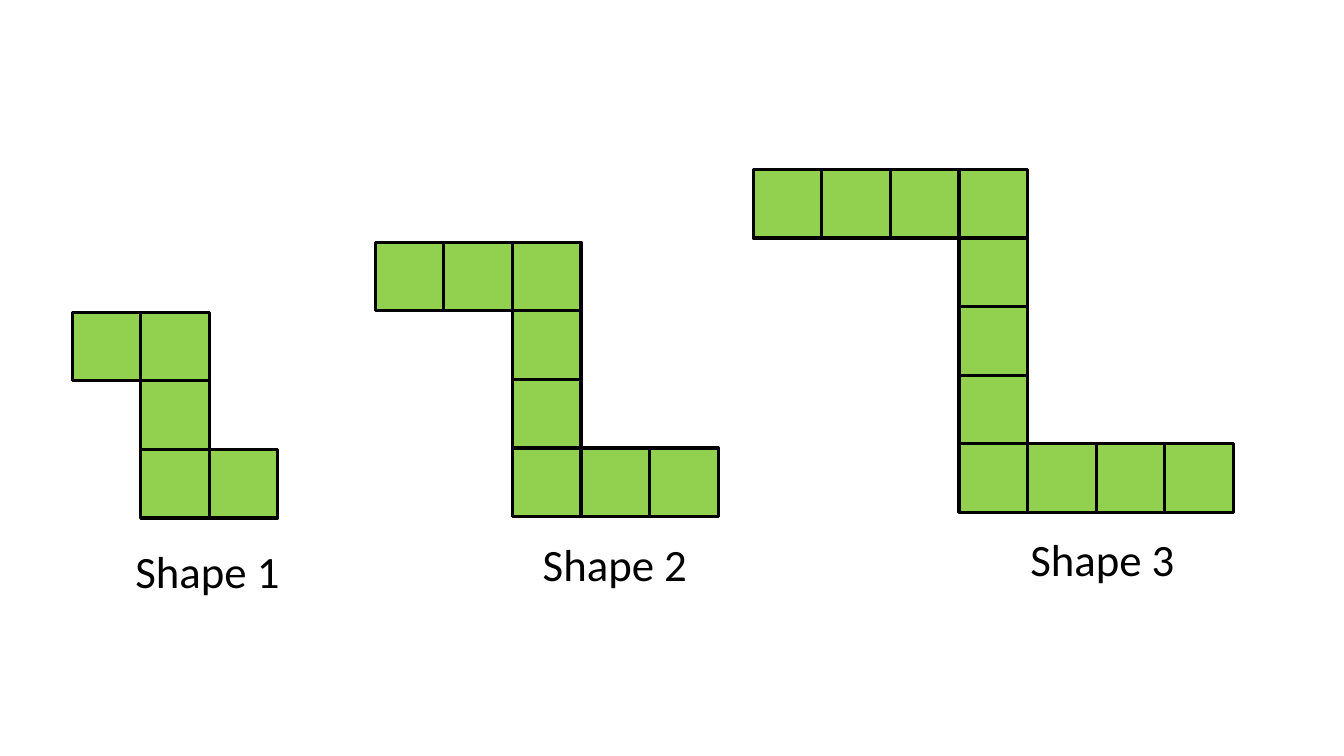
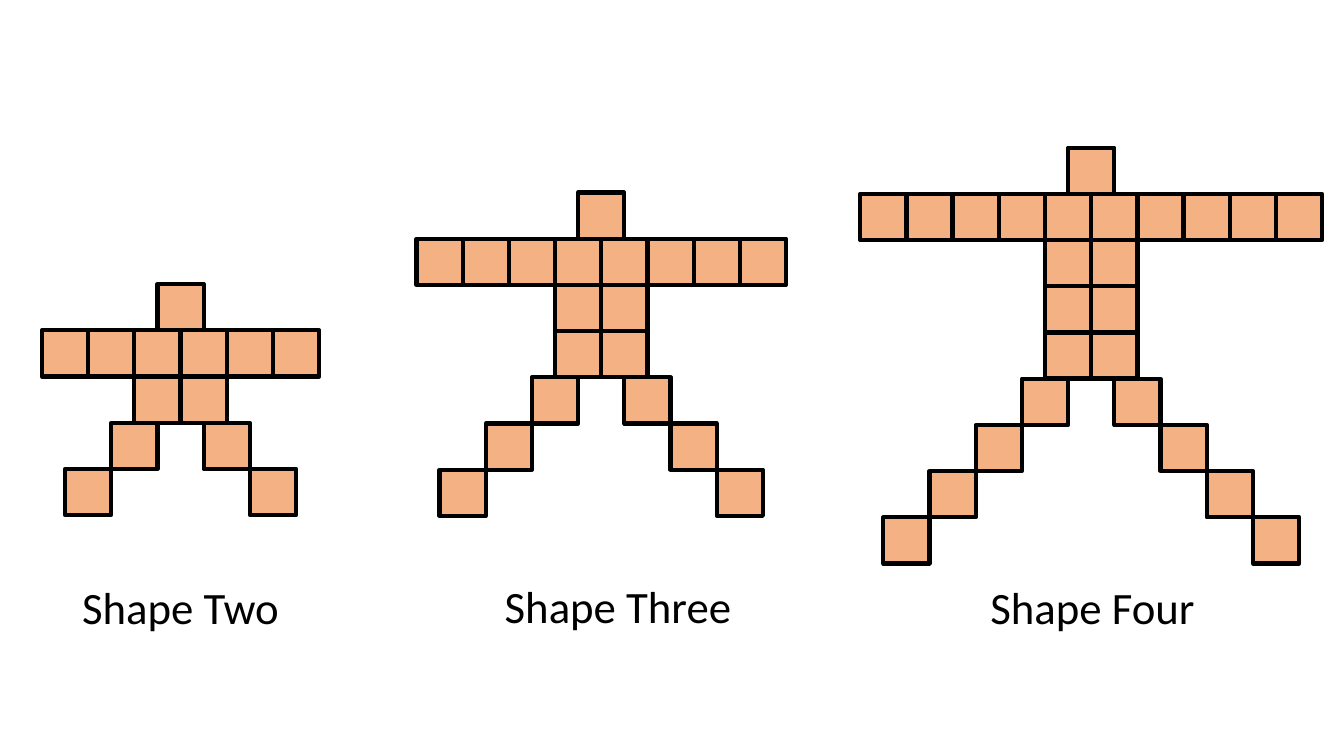
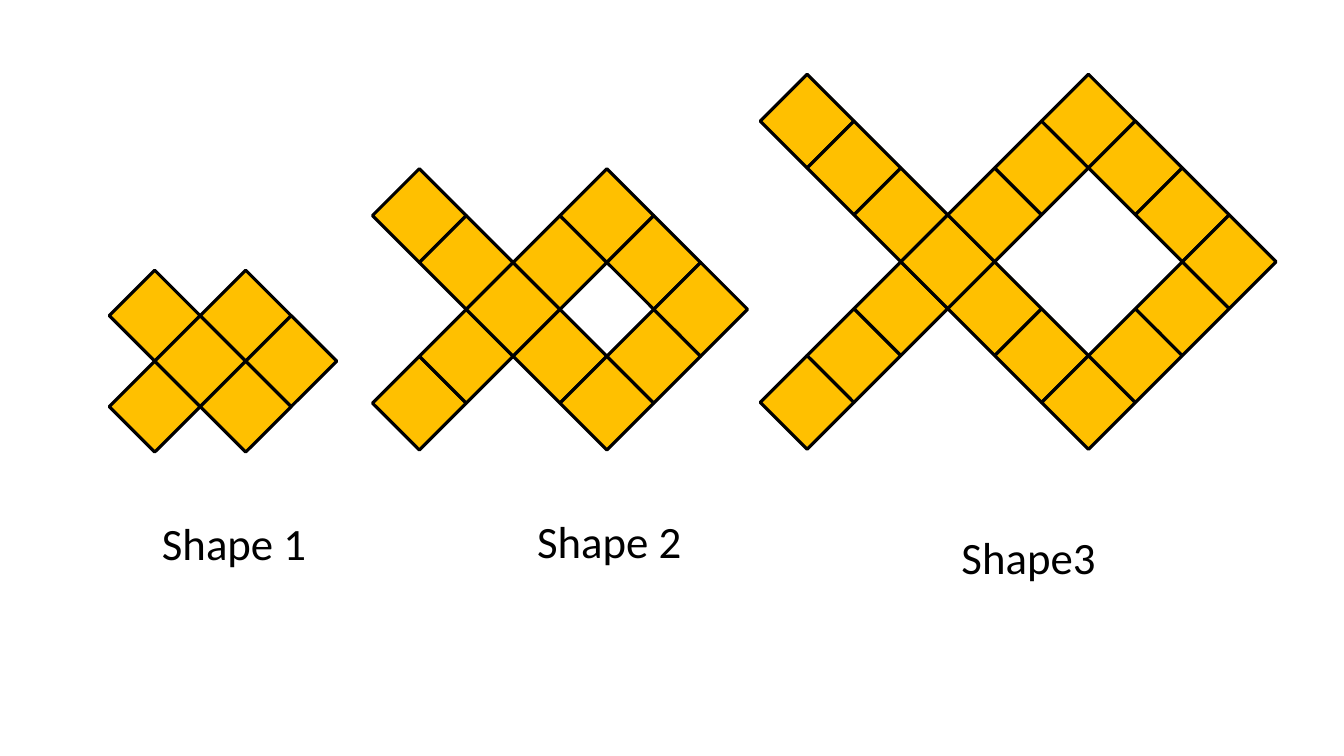
import math

import pptx
import pptx.dml.color
import pptx.enum.shapes
import pptx.enum.text
import pptx.util

Pt = pptx.util.Pt


def color(value):
    return pptx.dml.color.RGBColor.from_string(value)


class PatternDeck:
    font = "Calibri"
    ink = "000000"
    label_size = 32
    label_height = 46

    def __init__(self):
        self.deck = pptx.Presentation()
        self.deck.slide_width = Pt(960)
        self.deck.slide_height = Pt(540)

    def new_page(self, fill, line_width):
        self.page = self.deck.slides.add_slide(self.deck.slide_layouts[6])
        self.fill = fill
        self.line_width = line_width

    def figure(self, corners, side, rotation=0):
        group = self.page.shapes.add_group_shape()
        for left, top in corners:
            tile = group.shapes.add_shape(
                pptx.enum.shapes.MSO_SHAPE.RECTANGLE,
                Pt(left), Pt(top), Pt(side), Pt(side))
            tile.rotation = rotation
            tile.shadow.inherit = False
            tile.fill.solid()
            tile.fill.fore_color.rgb = color(self.fill)
            tile.line.color.rgb = color(self.ink)
            tile.line.width = Pt(self.line_width)

    def label(self, text, left, top, width):
        box = self.page.shapes.add_textbox(
            Pt(left), Pt(top), Pt(width), Pt(self.label_height))
        frame = box.text_frame
        frame.word_wrap = True
        frame.auto_size = pptx.enum.text.MSO_AUTO_SIZE.SHAPE_TO_FIT_TEXT
        para = frame.paragraphs[0]
        para.text = text
        para.alignment = pptx.enum.text.PP_ALIGN.CENTER
        para.font.name = self.font
        para.font.size = Pt(self.label_size)
        para.font.color.rgb = color(self.ink)

    def zigzag(self, count, left, top, side=49):
        cells = [(column, 0) for column in range(count + 1)]
        cells += [(count, row) for row in range(1, count + 1)]
        cells += [(count + column, count + 1) for column in range(count + 1)]
        self.figure([(left + x * side, top + y * side) for x, y in cells], side)

    def person(self, count, center, arms_top, side=33):
        head = [(-0.5, -1)]
        arms = [(column, 0) for column in range(-count - 1, count + 1)]
        body = [(column, row) for row in range(1, count) for column in (-1, 0)]
        legs = [(x, count + step) for step in range(count)
                for x in (-1.5 - step, 0.5 + step)]
        self.figure([(center + x * side, arms_top + y * side)
                     for x, y in head + arms + body + legs], side)

    def fish(self, count, center_x, center_y, step):
        side = round(step * math.sqrt(2), 2)
        corners = []
        for column in range(-count, 2 * count + 1):
            height = min(abs(column), 2 * count - column)
            for row in sorted({-height, height}):
                corners.append((center_x + column * step - side / 2,
                                center_y + row * step - side / 2))
        self.figure(corners, side, 45)


def main():
    patterns = PatternDeck()

    patterns.new_page("92D050", 2.25)
    for count, left, top, label in (
            (1, 51.5, 223, ("Shape 1", 57.5, 384.5, 181.5)),
            (2, 268, 173, ("Shape 2", 348.5, 380, 181.5)),
            (3, 538, 121, ("Shape 3", 714, 376.5, 147))):
        patterns.zigzag(count, left, top)
        patterns.label(*label)

    patterns.new_page("F4B183", 3)
    for count, center, arms_top, label in (
            (2, 129, 236, ("Shape Two", 13, 410.5, 232)),
            (3, 429.5, 170.5, ("Shape Three", 325.5, 409.5, 232)),
            (4, 779.5, 138.5, ("Shape Four", 664.5, 410.5, 232))):
        patterns.person(count, center, arms_top)
        patterns.label(*label)

    patterns.new_page("FFC000", 2.25)
    for count, center_x, center_y, step, label in (
            (1, 143, 258, 32.5, ("Shape 1", 95, 365, 144.5)),
            (2, 366.5, 221, 33.5, ("Shape 2", 363, 363.5, 144.5)),
            (3, 677, 187, 33.5, ("Shape3", 662.5, 375, 144.5))):
        patterns.fish(count, center_x, center_y, step)
        patterns.label(*label)

    patterns.deck.save("out.pptx")


if __name__ == "__main__":
    main()
